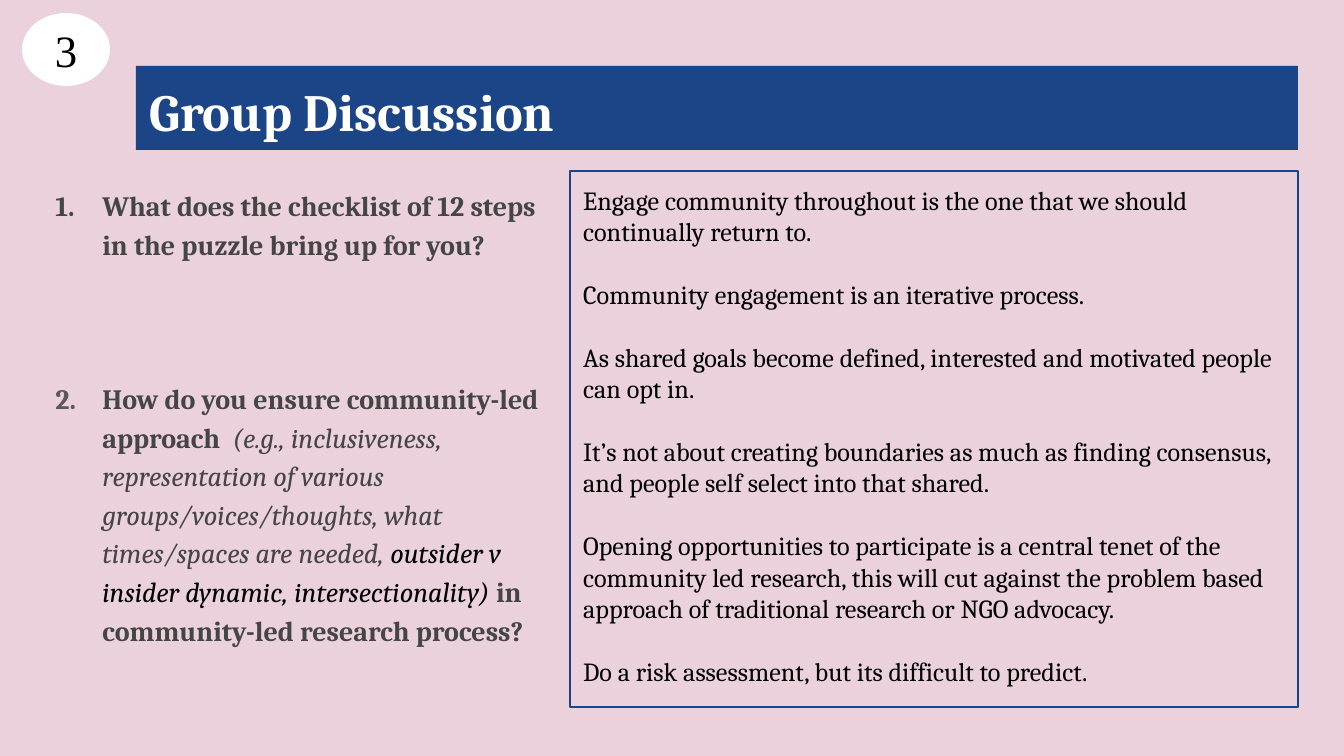
from lxml.etree import SubElement
from pptx import Presentation
from pptx.dml.color import RGBColor
from pptx.enum.shapes import MSO_SHAPE
from pptx.enum.text import MSO_ANCHOR, MSO_AUTO_SIZE, PP_ALIGN
from pptx.oxml.ns import qn
from pptx.util import Inches, Pt

PX = Inches(10) / 1344
COLORS = {"pink": "EAD1DC", "blue": "1C4587", "white": "FFFFFF",
          "black": "000000", "dark": "454545", "gray": "595959"}

QUESTION = {"size": Pt(15), "bold": True, "color": "dark"}
EXAMPLE = {"size": Pt(15), "italic": True, "color": "dark"}
ADDED = {**EXAMPLE, "color": "black"}
ANSWER = {"size": Pt(14), "color": "black"}

# Number colour, then the runs of each question
QUESTIONS = [
    ("dark", [("What does the checklist of 12 steps in the puzzle bring up for you?", QUESTION)]),
    ("gray", [
        ("How do you ensure community-led approach  ", QUESTION),
        ("(e.g., inclusiveness, representation of various groups/voices/thoughts, "
         "what times/spaces are needed, ", EXAMPLE),
        ("outsider v insider dynamic, intersectionality) ", ADDED),
        ("in community-led research process?", QUESTION),
    ]),
]
ANSWERS = [
    "Engage community throughout is the one that we should continually return to.",
    "Community engagement is an iterative process.",
    "As shared goals become defined, interested and motivated people can opt in.",
    "It’s not about creating boundaries as much as finding consensus, "
    "and people self select into that shared.",
    "Opening opportunities to participate is a central tenet of the community led research, "
    "this will cut against the problem based approach of traditional research or NGO advocacy.",
    "Do a risk assessment, but its difficult to predict.",
]


def px(n):
    return round(n * PX)


def rgb(name):
    return RGBColor.from_string(COLORS[name])


def set_fill(sp, color):
    sp.fill.solid()
    sp.fill.fore_color.rgb = rgb(color)


def set_frame(sp, anchor=MSO_ANCHOR.TOP):
    tf = sp.text_frame
    frame = {"word_wrap": True, "auto_size": MSO_AUTO_SIZE.NONE, "vertical_anchor": anchor}
    for side in ("left", "top", "right", "bottom"):
        frame[f"margin_{side}"] = Inches(0.1)
    for key, value in frame.items():
        setattr(tf, key, value)
    return tf


def add_run(p, text, color, font="Cambria", **fmt):
    r = p.add_run()
    r.text = text
    r.font.name = font
    r.font.color.rgb = rgb(color)
    for key, value in fmt.items():
        setattr(r.font, key, value)


def add_paragraph(tf, runs, index=0, align=PP_ALIGN.LEFT, gap=0, line=1.0):
    """Write the index-th paragraph; gap separates it from the one before."""
    p = tf.add_paragraph() if index else tf.paragraphs[0]
    p.alignment = align
    p.line_spacing = line
    p.space_before = Pt(gap if index else 0)
    for text, fmt in runs:
        add_run(p, text, **fmt)
    return p


def number_paragraph(p, color):
    pPr = p._p.get_or_add_pPr()
    pPr.set("marL", str(Inches(0.5)))
    pPr.set("indent", str(Inches(-0.35)))
    clr = SubElement(pPr, qn("a:buClr"))
    SubElement(clr, qn("a:srgbClr"), val=COLORS[color])
    SubElement(pPr, qn("a:buFont"), typeface="Cambria")
    SubElement(pPr, qn("a:buAutoNum"), type="arabicPeriod")


def add_title(s, text, *box):
    sp = s.shapes.title
    sp.left, sp.top, sp.width, sp.height = map(px, box)
    set_fill(sp, "blue")
    add_paragraph(set_frame(sp), [(text, {"size": Pt(28), "bold": True, "color": "white"})])


def add_questions(s, *box):
    tf = set_frame(s.shapes.add_textbox(*map(px, box)))
    for i, (color, runs) in enumerate(QUESTIONS):
        number_paragraph(add_paragraph(tf, runs, i, gap=62, line=1.15), color)


def add_answers(s, *box):
    sp = s.shapes.add_shape(MSO_SHAPE.RECTANGLE, *map(px, box))
    sp.shadow.inherit = False
    sp.fill.background()
    sp.line.color.rgb = rgb("blue")
    sp.line.width = Pt(0.75)
    tf = set_frame(sp)
    for i, text in enumerate(ANSWERS):
        add_paragraph(tf, [(text, ANSWER)], i, gap=16.8)


def add_badge(s, text, *box):
    sp = s.shapes.add_shape(MSO_SHAPE.OVAL, *map(px, box))
    sp.shadow.inherit = False
    set_fill(sp, "white")
    sp.line.fill.background()
    fmt = {"size": Pt(24), "color": "black", "font": "Times New Roman"}
    add_paragraph(set_frame(sp, MSO_ANCHOR.MIDDLE), [(text, fmt)], align=PP_ALIGN.CENTER)


def main():
    prs = Presentation()
    prs.slide_width, prs.slide_height = px(1344), px(756)
    s = prs.slides.add_slide(prs.slide_layouts[5])
    s.background.fill.solid()
    s.background.fill.fore_color.rgb = rgb("pink")
    add_title(s, "Group Discussion", 136, 66, 1162, 84)
    add_questions(s, 22, 170, 541, 502)
    add_answers(s, 570, 171, 728, 536)
    add_badge(s, "3", 22, 13, 88, 73)
    prs.save("out.pptx")


if __name__ == "__main__":
    main()
